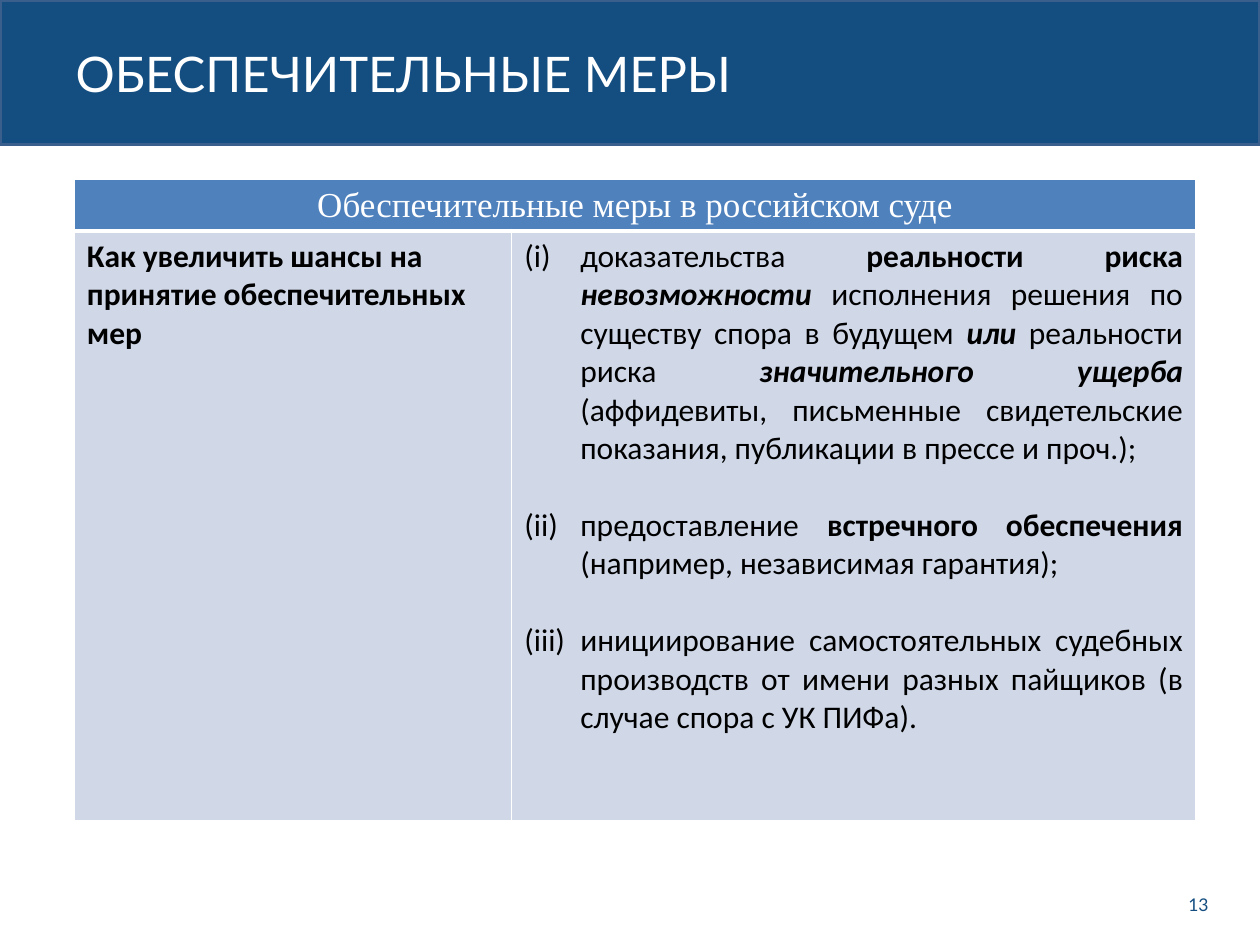
from lxml.etree import SubElement as Sub
from pptx import Presentation
from pptx.dml.color import RGBColor as RGB
from pptx.enum.shapes import MSO_SHAPE as Shape
from pptx.enum.text import MSO_ANCHOR as Anchor, PP_ALIGN as Align
from pptx.oxml import parse_xml
from pptx.oxml.ns import nsdecls, qn
from pptx.util import Inches, Pt

NAVY = RGB(0x14, 0x4E, 0x81)
EDGE = RGB(0x3A, 0x5F, 0x8C)
BLUE = RGB(0x4F, 0x81, 0xBD)
PALE = RGB(0xD0, 0xD8, 0xE8)
WHITE = RGB(0xFF, 0xFF, 0xFF)
BLACK = RGB(0, 0, 0)

WIDE, HIGH = Inches(10), Inches(7.5)
HEAD = "Обеспечительные меры в российском суде"
ASK = "Как увеличить шансы на принятие обеспечительных мер"
STEPS = [
    [("доказательства ", ""), ("реальности риска ", "b"),
     ("невозможности", "bi"),
     (" исполнения решения по существу спора в будущем ", ""),
     ("или", "bi"), (" реальности риска ", ""),
     ("значительного ущерба ", "bi"),
     ("(аффидевиты, письменные свидетельские показания, "
      "публикации в прессе и проч.);", "")],
    [("предоставление ", ""), ("встречного обеспечения ", "b"),
     ("(например, независимая гарантия);", "")],
    [("инициирование самостоятельных судебных производств от имени "
      "разных пайщиков (в случае спора с УК ПИФа).", "")],
]


def write(para, runs, font="Calibri", size=18, color=BLACK, align=Align.LEFT):
    """Fill a paragraph with (text, style) runs; style holds b and i."""
    para.alignment = align
    for text, style in runs:
        run = para.add_run()
        run.text = text
        face = run.font
        face.name, face.size = font, Pt(size)
        face.color.rgb = color
        face.bold, face.italic = "b" in style, "i" in style


def place(part, box):
    """Set the position and size of a part from a box."""
    part.left, part.top, part.width, part.height = box


def share(left, top, width, height):
    """Turn shares of the slide into a box of lengths."""
    return (int(WIDE * left), int(HIGH * top),
            int(WIDE * width), int(HIGH * height))


def number(para, indent):
    """Give a paragraph a hanging roman number in brackets."""
    props = para._p.get_or_add_pPr()
    props.set("marL", str(indent))
    props.set("indent", str(-indent))
    Sub(props, qn("a:buFont"), typeface="+mj-lt")
    Sub(props, qn("a:buAutoNum"), type="romanLcParenBoth")


def paint(cell, fill, base=1):
    """Fill a cell and draw its white borders, base being the lower one."""
    cell.fill.solid()
    cell.fill.fore_color.rgb = fill
    props = cell._tc.get_or_add_tcPr()
    for spot, (side, width) in enumerate(zip("LRTB", (1, 1, 1, base))):
        props.insert(spot, parse_xml(
            f'<a:ln{side} {nsdecls("a")} w="{Pt(width)}"><a:solidFill>'
            f'<a:srgbClr val="{WHITE}"/></a:solidFill></a:ln{side}>'))


def banner(slide, box):
    """Draw the top band and set the title over it."""
    left, top, width, height = box
    band = slide.shapes.add_shape(Shape.RECTANGLE, *box)
    band.shadow.inherit = False
    band.fill.solid()
    band.fill.fore_color.rgb = NAVY
    band.line.color.rgb = EDGE
    band.line.width = Pt(2)
    title = slide.shapes.title
    title._element.addprevious(band._element)
    place(title, (left + int(width * 0.05), top + int(height * 0.16),
                  int(width * 0.7), int(height * 0.69)))
    frame = title.text_frame
    frame.vertical_anchor = Anchor.MIDDLE
    write(frame.paragraphs[0], [("ОБЕСПЕЧИТЕЛЬНЫЕ МЕРЫ", "")],
          font="Lato", size=28, color=WHITE)


def advice(slide, box):
    """Build the table with a merged head, a question and its steps."""
    left, top, width, height = box
    grid = slide.shapes.add_table(2, 2, *box).table
    grid.columns[0].width = int(width * 0.39)
    grid.columns[1].width = width - grid.columns[0].width
    grid.rows[0].height = int(height * 0.08)
    grid.rows[1].height = height - grid.rows[0].height
    head, ask, steps = grid.cell(0, 0), grid.cell(1, 0), grid.cell(1, 1)
    head.merge(grid.cell(0, 1))
    for cell in (head, grid.cell(0, 1)):
        paint(cell, BLUE, base=3)
    for cell in (ask, steps):
        paint(cell, PALE)
    write(head.text_frame.paragraphs[0], [(HEAD, "")],
          font="Times New Roman", size=20, color=WHITE, align=Align.CENTER)
    write(ask.text_frame.paragraphs[0], [(ASK, "b")])
    frame = steps.text_frame
    for rank, runs in enumerate(STEPS):
        para = frame.add_paragraph() if rank else frame.paragraphs[0]
        write(para, runs, align=Align.JUSTIFY)
        para.space_before = Pt(22 if rank else 0)
        number(para, int(width * 0.05))


def folio(slide, box):
    """Write the page number at the right of its box."""
    frame = slide.shapes.add_textbox(*box).text_frame
    frame.word_wrap = True
    frame.vertical_anchor = Anchor.MIDDLE
    write(frame.paragraphs[0], [("13", "")],
          font="Lato", size=10, color=NAVY, align=Align.RIGHT)


def main():
    """Build the slide and save it."""
    deck = Presentation()
    deck.slide_width, deck.slide_height = WIDE, HIGH
    slide = deck.slides.add_slide(deck.slide_layouts[5])
    banner(slide, share(0, 0, 1, 0.153))
    advice(slide, share(0.059, 0.19, 0.89, 0.678))
    folio(slide, share(0.925, 0.941, 0.044, 0.032))
    deck.save("out.pptx")


if __name__ == "__main__":
    main()
